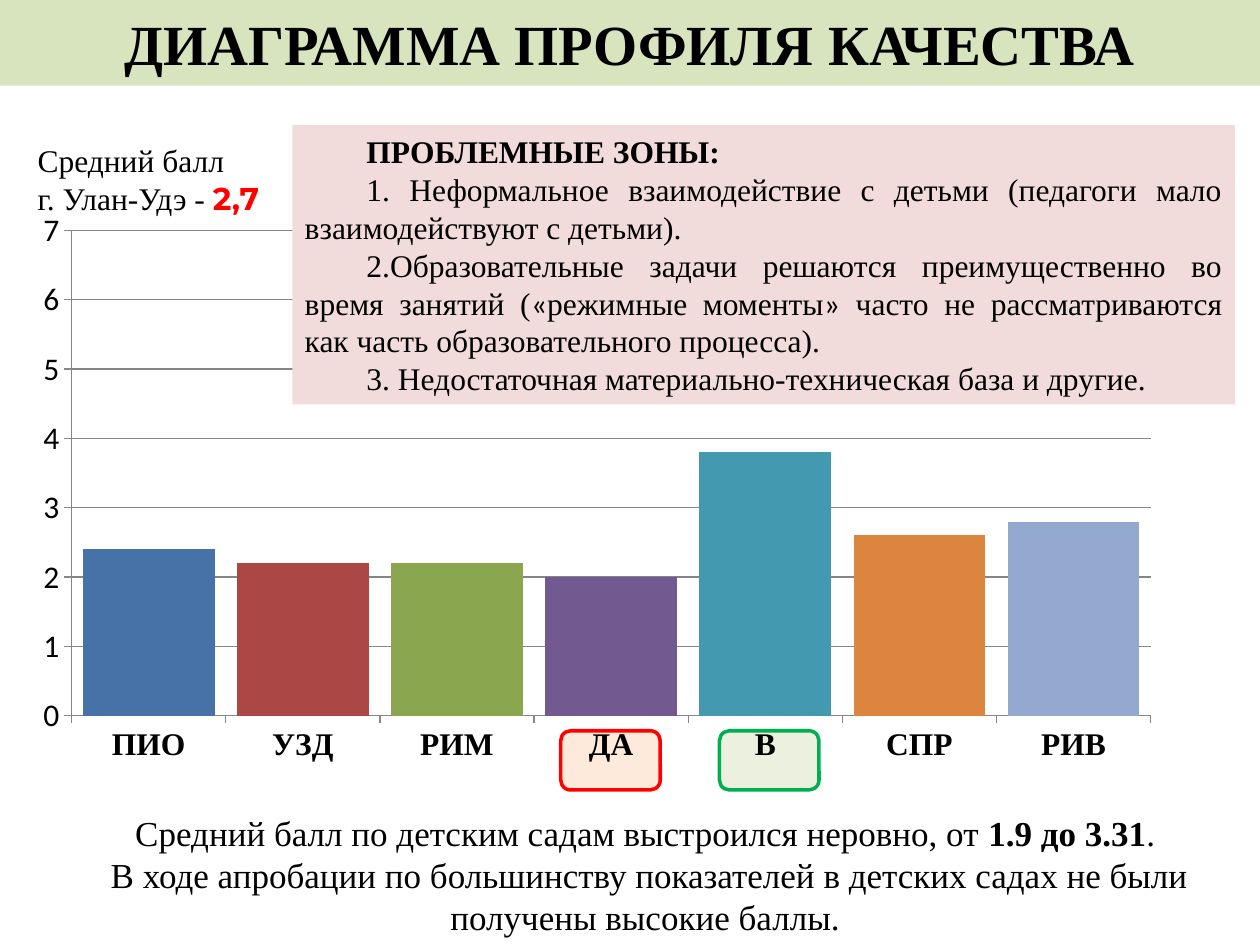
from dataclasses import dataclass

from lxml import etree
from pptx import Presentation
from pptx import util as u
from pptx.chart.data import CategoryChartData
from pptx.dml.color import RGBColor
from pptx.enum import chart as charts, shapes, text
from pptx.oxml.ns import qn


@dataclass(frozen=True)
class Theme:
    serif: str = "Times New Roman"
    sans: str = "Calibri"
    accent: str = "Montserrat"
    ink: str = "000000"
    red: str = "FF0000"
    green: str = "00B050"
    low_fill: str = "FDEADA"
    high_fill: str = "EBF1DE"
    title_fill: str = "D7E4BD"
    problem_fill: str = "F2DCDB"
    grid: str = "868686"
    bars: tuple = ("4672A8", "AB4744", "8AA64F", "725990",
                   "4299B0", "DC853E", "93A9CF")
    title_size: float = 32.4
    body_size: float = 18
    summary_size: float = 20


def rgb(value):
    return RGBColor.from_string(value)


class SlideBuilder:
    def __init__(self, slide, theme):
        self.slide = slide
        self.theme = theme

    def box(self, bounds, fill, line=None, shape_type=shapes.MSO_SHAPE.RECTANGLE):
        shape = self.slide.shapes.add_shape(shape_type, *map(u.Inches, bounds))
        shape.shadow.inherit = False
        shape.fill.solid()
        shape.fill.fore_color.rgb = rgb(fill)
        if line:
            shape.line.color.rgb = rgb(line)
            shape.line.width = u.Pt(2)
        else:
            shape.line.fill.background()
        return shape

    def text_box(self, bounds, paragraphs, size, align):
        shape = self.slide.shapes.add_textbox(*map(u.Inches, bounds))
        self.fill_text(shape, paragraphs, size, align)

    def fill_text(self, shape, paragraphs, size, align,
                  anchor=text.MSO_ANCHOR.TOP, indent=0):
        """Fill a shape; each paragraph is a list of (text, font overrides)."""
        frame = shape.text_frame
        frame.word_wrap = True
        frame.vertical_anchor = anchor
        for index, runs in enumerate(paragraphs):
            paragraph = frame.paragraphs[0] if index == 0 else frame.add_paragraph()
            paragraph.alignment = align
            self.style_font(paragraph.font, size, self.theme.serif)
            if indent:
                properties = paragraph.font._element.getparent()
                properties.set("marL", "0")
                properties.set("indent", str(u.Inches(indent)))
            for content, overrides in runs:
                run = paragraph.add_run()
                run.text = content
                # Shape text is white by default, so each run names its colour.
                run.font.color.rgb = rgb(overrides.get("color", self.theme.ink))
                if "bold" in overrides:
                    run.font.bold = overrides["bold"]
                if "name" in overrides:
                    run.font.name = overrides["name"]

    def style_font(self, font, size, name, bold=False):
        font.size = u.Pt(size)
        font.name = name
        font.bold = bold
        font.color.rgb = rgb(self.theme.ink)

    def column_chart(self, bounds, scores, plot):
        theme = self.theme
        data = CategoryChartData()
        data.categories = list(scores)
        data.add_series("Средний балл", list(scores.values()))
        chart = self.slide.shapes.add_chart(
            charts.XL_CHART_TYPE.COLUMN_CLUSTERED, *map(u.Inches, bounds), data).chart
        chart.has_legend = False
        chart.has_title = False
        self.style_font(chart.font, theme.body_size, theme.sans)

        columns = chart.plots[0]
        columns.gap_width = 17
        columns.overlap = -16
        columns.vary_by_categories = False
        for index, color in enumerate(theme.bars):
            fill = columns.series[0].points[index].format.fill
            fill.solid()
            fill.fore_color.rgb = rgb(color)

        values = chart.value_axis
        values.minimum_scale, values.maximum_scale, values.major_unit = 0, 7, 1
        values.has_major_gridlines = True
        for axis in (chart.category_axis, values):
            axis.major_tick_mark = charts.XL_TICK_MARK.OUTSIDE
            axis.format.line.color.rgb = rgb(theme.grid)
        values.major_gridlines.format.line.color.rgb = rgb(theme.grid)
        self.style_font(chart.category_axis.tick_labels.font,
                        theme.body_size, theme.serif, bold=True)
        self.place_plot(chart, plot)

    def place_plot(self, chart, plot):
        """Fix the inner plot area as fractions of the chart frame."""
        area = chart._chartSpace.chart.plotArea
        for old in area.findall(qn("c:layout")):
            area.remove(old)
        layout = etree.Element(qn("c:layout"))
        manual = etree.SubElement(layout, qn("c:manualLayout"))
        settings = [("layoutTarget", "inner"), ("xMode", "edge"), ("yMode", "edge")]
        for tag, value in settings + list(zip("xywh", plot)):
            etree.SubElement(manual, qn("c:" + tag)).set("val", str(value))
        area.insert(0, layout)


def main():
    presentation = Presentation()
    presentation.slide_width = u.Inches(10)
    presentation.slide_height = u.Inches(7.5)
    slide = presentation.slides.add_slide(presentation.slide_layouts[6])
    theme = Theme()
    builder = SlideBuilder(slide, theme)
    align, middle = text.PP_ALIGN, text.MSO_ANCHOR.MIDDLE
    bold = {"bold": True}
    quote = {"name": theme.sans}

    for left, fill, line in ((4.45, theme.low_fill, theme.red),
                             (5.71, theme.high_fill, theme.green)):
        builder.box((left, 5.8, 0.79, 0.47), fill, line,
                    shapes.MSO_SHAPE.ROUNDED_RECTANGLE)

    title = builder.box((0, 0, 10, 0.68), theme.title_fill)
    builder.fill_text(title, [[("ДИАГРАММА ПРОФИЛЯ КАЧЕСТВА", bold)]],
                      theme.title_size, align.CENTER, middle)

    scores = {"ПИО": 2.4, "УЗД": 2.2, "РИМ": 2.2, "ДА": 2,
              "В": 3.8, "СПР": 2.6, "РИВ": 2.8}
    builder.column_chart((-0.2, 0.92, 10.98, 5.35), scores,
                         plot=(0.07, 0.17, 0.78, 0.72))

    builder.text_box((0.31, 6.39, 9.69, 1.11), [
        [("Средний балл по детским садам выстроился неровно, от ", {}),
         ("1.9 до 3.31", bold), (". ", {})],
        [("В ходе апробации по большинству показателей в детских садах "
          "не были получены высокие баллы. ", {})],
    ], theme.summary_size, align.CENTER)

    problems = builder.box((2.32, 0.99, 7.48, 2.22), theme.problem_fill)
    builder.fill_text(problems, [
        [("ПРОБЛЕМНЫЕ ЗОНЫ:", bold)],
        [("1. Неформальное взаимодействие с детьми (педагоги мало "
          "взаимодействуют с детьми).", {})],
        [("2.Образовательные задачи решаются преимущественно во время занятий (", {}),
         ("«", quote), ("режимные моменты", {}), ("»", quote),
         (" часто не рассматриваются как часть образовательного процесса).", {})],
        [("3. Недостаточная материально-техническая база и другие.", {})],
    ], theme.body_size, align.JUSTIFY, middle, indent=0.49)

    builder.text_box((0.2, 1.07, 2.05, 0.71), [
        [("Средний балл", {})],
        [("г. Улан-Удэ - ", {}),
         ("2,7", {"name": theme.accent, "color": theme.red, "bold": True})],
    ], theme.body_size, align.LEFT)

    presentation.save("out.pptx")


if __name__ == "__main__":
    main()
